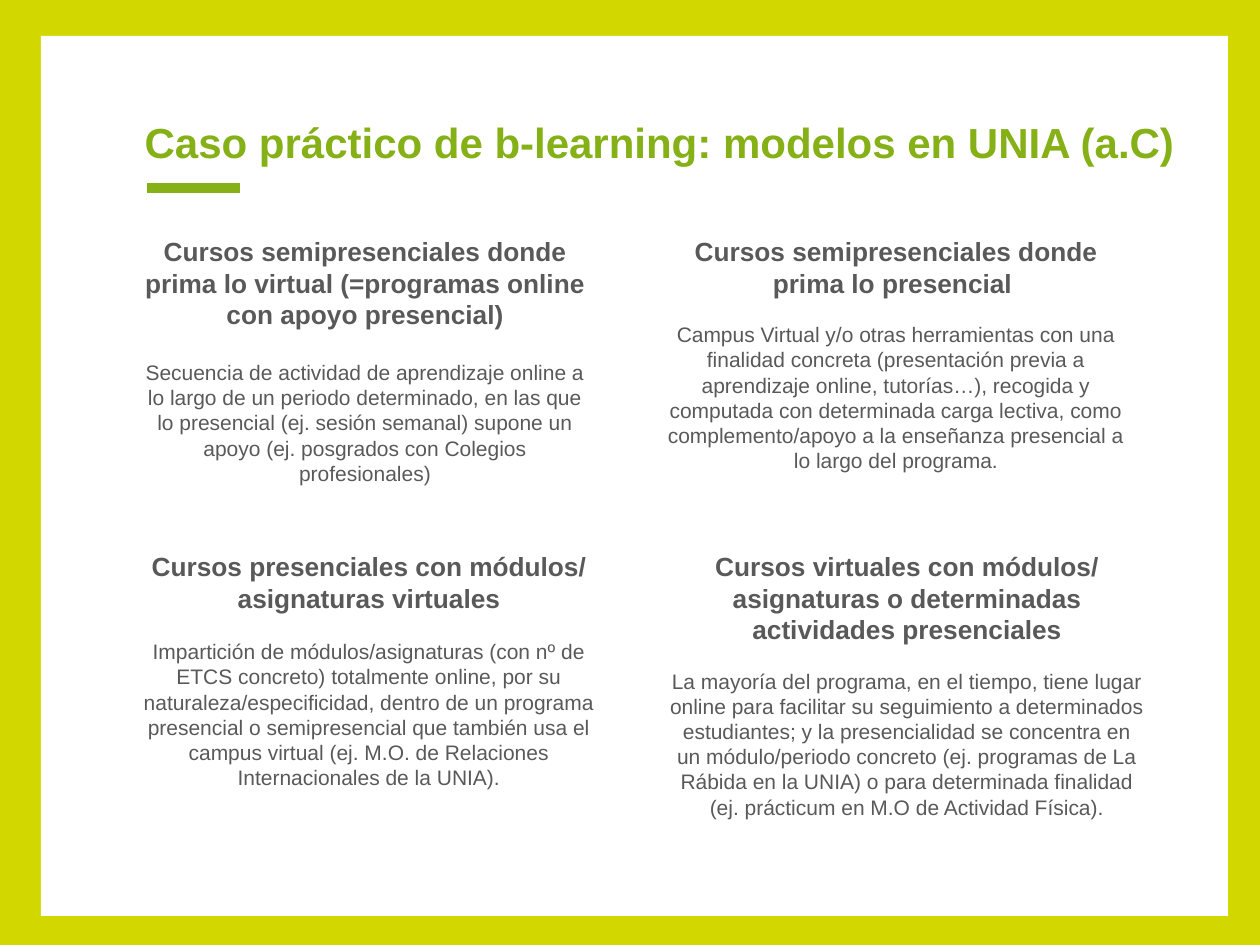
from lxml import etree
from pptx import Presentation
from pptx.dml.color import RGBColor
from pptx.enum.shapes import MSO_CONNECTOR as CONNECTOR, MSO_SHAPE as SHAPE
from pptx.enum.text import MSO_ANCHOR as ANCHOR, MSO_AUTO_SIZE as AUTO_SIZE, PP_ALIGN as ALIGN
from pptx.oxml.ns import qn
from pptx.util import Emu, Inches, Pt

LIME = RGBColor(0xD2, 0xD7, 0x00)
GREEN = RGBColor(0x85, 0xB0, 0x16)
GRAY = RGBColor(0x59, 0x59, 0x59)
WHITE = RGBColor(0xFF, 0xFF, 0xFF)
FONT = "Arial"
HEADING_SIZE, BODY_SIZE, LEADING = 15, 12, 1.2

# Box in px, heading, body, space between them in points
COURSES = [
    ((130, 223, 470, 290),
     "Cursos semipresenciales donde prima lo virtual (=programas online con apoyo presencial)",
     "Secuencia de actividad de aprendizaje online a lo largo de un periodo determinado, "
     "en las que lo presencial (ej. sesión semanal) supone un apoyo "
     "(ej. posgrados con Colegios profesionales)", 16.8),
    ((646, 223, 500, 290),
     "Cursos semipresenciales donde prima lo presencial ",
     "Campus Virtual y/o otras herramientas con una finalidad concreta (presentación previa "
     "a aprendizaje online, tutorías…), recogida y computada con determinada carga lectiva, "
     "como complemento/apoyo a la enseñanza presencial a lo largo del programa.", 13.2),
    ((130, 538, 478, 290),
     "Cursos presenciales con módulos/ asignaturas virtuales",
     "Impartición de módulos/asignaturas (con nº de ETCS concreto) totalmente online, por su "
     "naturaleza/especificidad, dentro de un programa presencial o semipresencial que también "
     "usa el campus virtual (ej. M.O. de Relaciones Internacionales de la UNIA).", 14.4),
    ((657, 538, 500, 290),
     "Cursos virtuales con módulos/ asignaturas o determinadas actividades presenciales",
     "La mayoría del programa, en el tiempo, tiene lugar online para facilitar su seguimiento "
     "a determinados estudiantes; y la presencialidad se concentra en un módulo/periodo "
     "concreto (ej. programas de La Rábida en la UNIA) o para determinada finalidad "
     "(ej. prácticum en M.O de Actividad Física).", 13.2),
]


def px(length):
    return Emu(round(length * Inches(1) / 126))


def set_font(para, size, color, bold):
    for span in para.runs:
        font = span.font
        font.name, font.size, font.bold = FONT, Pt(size), bold
        font.color.rgb = color


def prepare_frame(frame, anchor):
    frame.word_wrap = True
    frame.auto_size = AUTO_SIZE.NONE
    frame.vertical_anchor = anchor
    frame.margin_left = frame.margin_right = Inches(0.1)
    frame.margin_top = frame.margin_bottom = Inches(0.1)


def add_panel(page, box):
    panel = page.shapes.add_shape(SHAPE.RECTANGLE, *map(px, box))
    panel.shadow.inherit = False
    panel.fill.solid()
    panel.fill.fore_color.rgb = WHITE
    panel.line.fill.background()


def add_title(page, box, text):
    left, top, width, height = box
    title = page.shapes.title
    title.left, title.top, title.width, title.height = map(px, box)
    prepare_frame(title.text_frame, ANCHOR.BOTTOM)
    title.text_frame.text = text
    para = title.text_frame.paragraphs[0]
    para.alignment = ALIGN.LEFT
    para.line_spacing = 1.15
    set_font(para, 24, GREEN, True)

    # Short rule below the title
    y = top + height + 8
    rule = page.shapes.add_connector(
        CONNECTOR.STRAIGHT, px(left + 15), px(y), px(left + 108), px(y))
    rule.line.color.rgb = GREEN
    rule.line.width = Pt(6)
    etree.SubElement(rule._element.spPr, qn("a:effectLst"))


def add_course(page, box, heading, body, gap):
    frame = page.shapes.add_textbox(*map(px, box)).text_frame
    prepare_frame(frame, ANCHOR.TOP)
    frame.text = heading
    heading_para = frame.paragraphs[0]
    body_para = frame.add_paragraph()
    body_para.text = body
    body_para.space_before = Pt(gap)
    for para, size, bold in ((heading_para, HEADING_SIZE, True), (body_para, BODY_SIZE, False)):
        para.alignment = ALIGN.CENTER
        para.line_spacing = Pt(size * LEADING)
        set_font(para, size, GRAY, bold)


def main():
    deck = Presentation()
    deck.slide_width, deck.slide_height = Inches(10), Inches(7.5)
    page = deck.slides.add_slide(deck.slide_layouts[5])
    page.background.fill.solid()
    page.background.fill.fore_color.rgb = LIME

    add_panel(page, (41, 36, 1187, 880))
    add_title(page, (132, -24, 1085, 204),
              "Caso práctico de b-learning: modelos en UNIA (a.C)")
    for course in COURSES:
        add_course(page, *course)

    # The title placeholder goes in front of the panel
    tree = page.shapes.title._element.getparent()
    tree.append(page.shapes.title._element)
    deck.save("out.pptx")


if __name__ == "__main__":
    main()
